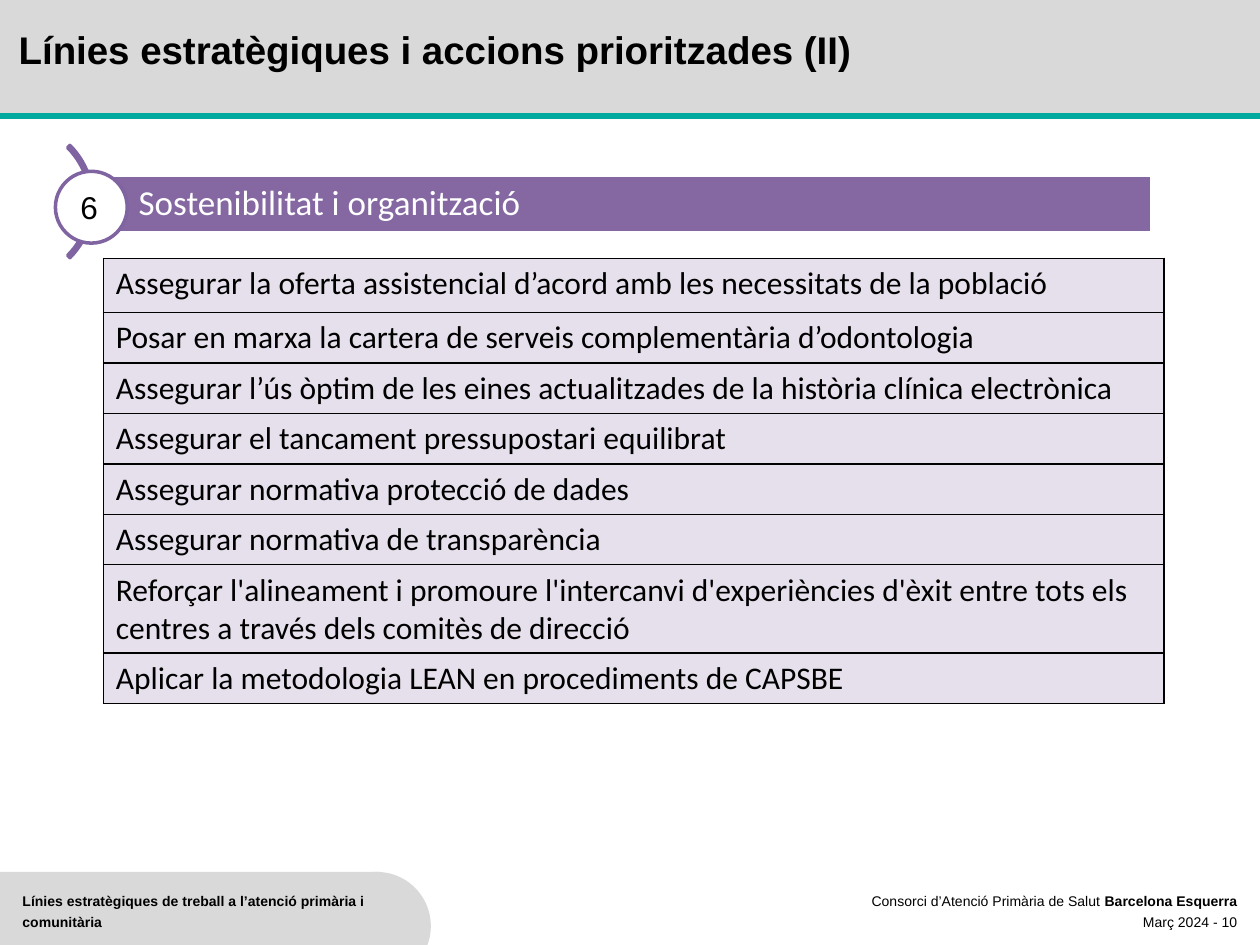
from lxml.etree import SubElement
from pptx import Presentation
from pptx.dml.color import RGBColor
from pptx.enum.shapes import MSO_CONNECTOR, MSO_SHAPE
from pptx.enum.text import MSO_ANCHOR, PP_ALIGN
from pptx.oxml import parse_xml
from pptx.oxml.ns import nsdecls, qn
from pptx.util import Inches, Pt

prs = Presentation()
prs.slide_width, prs.slide_height = Inches(10), Inches(7.5)
COL, ROW = prs.slide_width / 100, prs.slide_height / 75
s = prs.slides.add_slide(prs.slide_layouts[6])
rgb = RGBColor.from_string
GREY, PURPLE, BLACK, WHITE = "D9D9D9", "8064A2", "000000", "FFFFFF"


def add_shape(kind, x, y, w, h, fill=None, line=None):
    sp = s.shapes.add_shape(kind, int(x * COL), int(y * ROW), int(w * COL), int(h * ROW))
    sp.shadow.inherit = False
    if fill:
        sp.fill.solid()
        sp.fill.fore_color.rgb = rgb(fill)
    else:
        sp.fill.background()
    if line:
        sp.line.color.rgb = rgb(line)
        sp.line.width = Pt(2)
    else:
        sp.line.fill.background()
    return sp


def add_text(x, y, w, h, paras, size, font="Arial", color=BLACK, align=PP_ALIGN.LEFT, spacing=None):
    tb = s.shapes.add_textbox(int(x * COL), int(y * ROW), int(w * COL), int(h * ROW))
    tf = tb.text_frame
    tf.word_wrap = True
    for i, runs in enumerate(paras):
        p = tf.add_paragraph() if i else tf.paragraphs[0]
        p.alignment = align
        p.line_spacing = spacing
        for text, bold in runs:
            r = p.add_run()
            r.text = text
            r.font.name, r.font.size, r.font.bold = font, Pt(size), bold
            r.font.color.rgb = rgb(color)
    return tf


add_shape(MSO_SHAPE.RECTANGLE, 0, 69.2, 30.2, 5.8, GREY)
add_shape(MSO_SHAPE.OVAL, 25.6, 69.2, 8.6, 8.6, GREY)
add_shape(MSO_SHAPE.RECTANGLE, 0, 0, 100, 9.2, GREY)
rule = s.shapes.add_connector(MSO_CONNECTOR.STRAIGHT, 0, int(9.2 * ROW), prs.slide_width, int(9.2 * ROW))
rule.line.color.rgb = rgb("00AA9E")
rule.line.width = Pt(3)
SubElement(rule.element.spPr, qn("a:effectLst"))

add_text(0.8, 70, 30.2, 4.7,
         [[("Línies estratègiques de treball a l’atenció primària i comunitària", True)]],
         8, spacing=Pt(12))
add_text(67.5, 70, 31.7, 5,
         [[("Consorci d’Atenció Primària de Salut ", False), ("Barcelona Esquerra", True)],
          [("Març 2024 - 10", False)]],
         8, align=PP_ALIGN.RIGHT, spacing=Pt(12))
add_text(0.5, 2.2, 85.3, 4.1, [[("Línies estratègiques i accions prioritzades (II)", True)]],
         22, spacing=Pt(22))

actions = [
    ("Assegurar la oferta assistencial d’acord amb les necessitats de la població", 4.3),
    ("Posar en marxa la cartera de serveis complementària d’odontologia", 4),
    ("Assegurar l’ús òptim de les eines actualitzades de la història clínica electrònica", 4),
    ("Assegurar el tancament pressupostari equilibrat", 4),
    ("Assegurar normativa protecció de dades", 4),
    ("Assegurar normativa de transparència", 4),
    ("Reforçar l'alineament i promoure l'intercanvi d'experiències d'èxit entre tots els "
     "centres a través dels comitès de direcció", 7),
    ("Aplicar la metodologia LEAN en procediments de CAPSBE", 4),
]
tbl = s.shapes.add_table(len(actions), 1, int(8.2 * COL), int(20.5 * ROW),
                         int(84.2 * COL), int(35.3 * ROW)).table
tbl.first_row = tbl.horz_banding = False
for i, (text, height) in enumerate(actions):
    tbl.rows[i].height = int(height * ROW)
    cell = tbl.cell(i, 0)
    r = cell.text_frame.paragraphs[0].add_run()
    r.text = text
    r.font.name, r.font.size = "Calibri", Pt(18)
    r.font.color.rgb = rgb(BLACK)
    tcPr = cell._tc.get_or_add_tcPr()
    for side in ("lnL", "lnR", "lnT", "lnB"):
        tcPr.append(parse_xml(
            f'<a:{side} {nsdecls("a")} w="{Pt(1)}"><a:solidFill><a:srgbClr val="{BLACK}"/>'
            f'</a:solidFill></a:{side}>'))
    cell.fill.solid()
    cell.fill.fore_color.rgb = rgb("E6E0EC")

arc = add_shape(MSO_SHAPE.BLOCK_ARC, -5.2, 9.7, 12.6, 12.6, line=PURPLE)
for i, value in enumerate((189, 27, 0.02)):
    arc.adjustments[i] = value
add_shape(MSO_SHAPE.RECTANGLE, 7.3, 13.9, 84.1, 4.6, "8568A2", WHITE)
tf = add_text(7.3, 13.9, 84.1, 4.6, [[("Sostenibilitat i organització", False)]],
              20, "Calibri", WHITE, spacing=0.9)
tf.vertical_anchor = MSO_ANCHOR.MIDDLE
tf.margin_left = Inches(0.37)
tf.margin_right = tf.margin_top = tf.margin_bottom = Inches(0.06)
add_shape(MSO_SHAPE.OVAL, 4.4, 13.6, 5.7, 5.7, WHITE, PURPLE)
add_text(5.4, 14.4, 4.1, 4, [[("6", False)]], 18)

prs.save("out.pptx")
